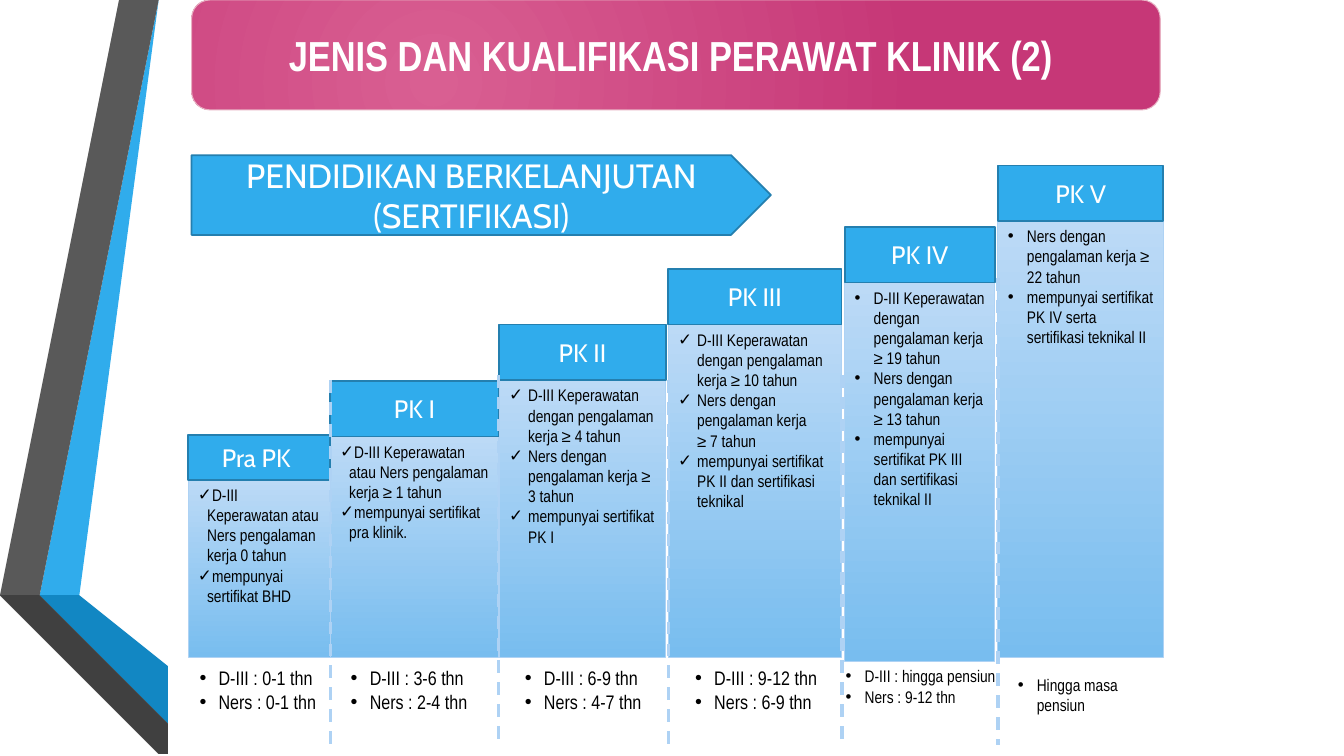
from pptx import Presentation
from pptx.dml.color import RGBColor
from pptx.enum.dml import MSO_LINE
from pptx.enum.shapes import MSO_CONNECTOR, MSO_SHAPE
from pptx.enum.text import MSO_ANCHOR, PP_ALIGN
from pptx.oxml.ns import qn
from pptx.util import Cm, Pt
from lxml import etree
from dataclasses import dataclass

RECT, ARROW, ROUND = MSO_SHAPE.RECTANGLE, MSO_SHAPE.PENTAGON, MSO_SHAPE.ROUNDED_RECTANGLE
STRAIGHT, DASH = MSO_CONNECTOR.STRAIGHT, MSO_LINE.DASH
TOP, MIDDLE = MSO_ANCHOR.TOP, MSO_ANCHOR.MIDDLE
LEFT, CENTER = PP_ALIGN.LEFT, PP_ALIGN.CENTER


@dataclass(frozen=True)
class Theme:
    blue: str = "30ACEC"
    edge: str = "247FAF"
    pale: str = "AED2F4"
    white: str = "FFFFFF"
    black: str = "000000"
    rose: str = "E8B1C3"
    gray: str = "595959"
    coal: str = "262626"
    navy: str = "0C5A82"
    deep: str = "1287C3"
    slate: str = "404040"
    sky: tuple = ("BCDAF6", "78BDEF")
    pink: tuple = ("D95F92", "C63777")
    plain: str = "Arial Narrow"
    round: str = "Cabin"
    title: int = 30
    banner: int = 24
    head: int = 18
    note: int = 14
    small: int = 12


class Board:
    def __init__(self, theme, slide):
        self.theme = theme
        self.shapes = slide.shapes

    def paint(self, shape, fill, line=None, width=0.75):
        shape.shadow.inherit = False
        if isinstance(fill, tuple):
            shape.fill.gradient()
            shape.fill.gradient_angle = 270
            for stop, color in zip(shape.fill.gradient_stops, fill):
                stop.color.rgb = RGBColor.from_string(color)
        else:
            shape.fill.solid()
            shape.fill.fore_color.rgb = RGBColor.from_string(fill)
        if line:
            shape.line.color.rgb = RGBColor.from_string(line)
            shape.line.width = Pt(width)
        else:
            shape.line.fill.background()

    def ribbon(self, fill, points):
        pen = self.shapes.build_freeform(*points[0], scale=Cm(1))
        pen.add_line_segments(points[1:], close=True)
        self.paint(pen.convert_to_shape(), fill)

    def block(self, kind, box, fill, line=None, width=0.75):
        shape = self.shapes.add_shape(kind, *map(Cm, box))
        self.paint(shape, fill, line, width)
        return shape

    def letter(self, shape, lines, color, style, anchor=MIDDLE, align=CENTER, mark=None, hang=0):
        frame = shape.text_frame
        frame.word_wrap = True
        frame.vertical_anchor = anchor
        for i, line in enumerate(lines):
            para = frame.add_paragraph() if i else frame.paragraphs[0]
            para.text = line
            para.alignment = align
            for run in para.runs:
                for key, value in style.items():
                    setattr(run.font, key, value)
                run.font.color.rgb = RGBColor.from_string(color)
            if mark:
                props = para._p.get_or_add_pPr()
                props.set("marL", str(Cm(hang)))
                props.set("indent", str(-Cm(hang)))
                etree.SubElement(props, qn("a:buFont")).set("typeface", "Arial")
                etree.SubElement(props, qn("a:buChar")).set("char", mark)

    def label(self, kind, box, text, size):
        shape = self.block(kind, box, self.theme.blue, self.theme.edge, 1.25)
        self.letter(shape, [text], self.theme.white, {"name": self.theme.round, "size": Pt(size)})

    def bullets(self, shape, lines, size, mark, hang):
        style = {"name": self.theme.plain, "size": Pt(size)}
        self.letter(shape, lines, self.theme.black, style, TOP, LEFT, mark, hang)

    def step(self, name, box, floor, mark, hang, lines):
        left, top, width, height = box
        base = top + height
        body = self.block(RECT, (left, base, width, floor - base), self.theme.sky, self.theme.pale)
        self.bullets(body, lines, self.theme.small, mark, hang)
        self.label(RECT, box, name, self.theme.head)

    def note(self, left, top, width, size, lines):
        shape = self.shapes.add_textbox(*map(Cm, (left, top, width, 1.45)))
        self.bullets(shape, lines, size, "•", 0.48)

    def divide(self, x, top, foot):
        line = self.shapes.add_connector(STRAIGHT, *map(Cm, (x, top, x, foot)))
        line.line.color.rgb = RGBColor.from_string(self.theme.pale)
        line.line.width = Pt(2.25)
        line.line.dash_style = DASH
        etree.SubElement(line._element.spPr, qn("a:effectLst"))

    def title(self, box, text):
        shape = self.block(ROUND, box, self.theme.pink, self.theme.rose)
        grad = shape._element.spPr.find(qn("a:gradFill"))
        grad.remove(grad.find(qn("a:lin")))
        glow = etree.SubElement(grad, qn("a:path"))
        glow.set("path", "circle")
        focus = etree.SubElement(glow, qn("a:fillToRect"))
        for side, share in {"l": 50, "t": 100, "r": 100, "b": 50}.items():
            focus.set(side, str(share * 1000))
        style = {"name": self.theme.plain, "size": Pt(self.theme.title), "bold": True}
        self.letter(shape, [text], self.theme.white, style)


RIBBONS = [
    (Theme.blue, [(1.27, 14.68), (1.96, 14.81), (4.39, 0), (3.68, 0)]),
    (Theme.gray, [(3.53, 0), (2.82, 0), (0.41, 14.55), (1.12, 14.66)]),
    (Theme.coal, [(0.41, 14.55), (3.68, 19.05), (3.84, 19.05)]),
    (Theme.navy, [(1.27, 14.71), (5.28, 19.05), (5.44, 19.05)]),
    (Theme.deep, [(1.27, 14.68), (5.44, 19.05), (7.19, 19.05), (1.96, 14.81)]),
    (Theme.slate, [(5.13, 19.05), (1.22, 14.81), (1.12, 14.66), (0.41, 14.55), (3.84, 19.05)]),
]
STEPS = [
    ("PK I", (8.32, 9.6, 4.25, 1.4), 16.56, "✓", 0.23,
     ["D-III Keperawatan atau Ners pengalaman kerja ≥ 1 tahun",
      "mempunyai sertifikat pra klinik."]),
    ("PK II", (12.58, 8.18, 4.2, 1.4), 16.56, "✓", 0.48,
     ["D-III Keperawatan dengan pengalaman kerja ≥ 4 tahun",
      "Ners dengan pengalaman kerja ≥ 3 tahun", "mempunyai sertifikat PK I"]),
    ("PK III", (16.84, 6.78, 4.37, 1.4), 16.56, "✓", 0.48,
     ["D-III Keperawatan dengan pengalaman kerja ≥ 10 tahun",
      "Ners dengan pengalaman kerja\v≥ 7 tahun",
      "mempunyai sertifikat PK II dan sertifikasi teknikal"]),
    ("PK IV", (21.29, 5.72, 3.78, 1.4), 16.66, "•", 0.48,
     ["D-III Keperawatan dengan pengalaman kerja ≥ 19 tahun",
      "Ners dengan pengalaman kerja ≥ 13 tahun",
      "mempunyai sertifikat PK III dan sertifikasi teknikal II"]),
    ("PK V", (25.15, 4.17, 4.17, 1.4), 16.58, "•", 0.48,
     ["Ners dengan pengalaman kerja ≥ 22 tahun",
      "mempunyai sertifikat PK IV serta sertifikasi teknikal II"]),
    ("Pra PK ", (4.74, 10.97, 3.58, 1.12), 16.56, "✓", 0.23,
     ["D-III Keperawatan atau Ners pengalaman kerja 0 tahun",
      "mempunyai sertifikat BHD"]),
]
NOTES = [
    (17.27, 16.66, 4.29, Theme.note, ["D-III : 9-12 thn", "Ners : 6-9 thn"]),
    (12.98, 16.66, 4.29, Theme.note, ["D-III : 6-9 thn", "Ners : 4-7 thn"]),
    (8.59, 16.66, 4.01, Theme.note, ["D-III : 3-6 thn", "Ners : 2-4 thn"]),
    (4.78, 16.66, 4.29, Theme.note, ["D-III : 0-1 thn", "Ners : 0-1 thn"]),
    (21.06, 16.66, 4.29, Theme.small, ["D-III : hingga pensiun", "Ners : 9-12 thn"]),
    (25.4, 16.87, 4.29, Theme.small, ["Hingga masa pensiun"]),
]
LINES = [(8.32, 9.58, 18.77), (12.57, 9.45, 18.64), (16.84, 9.58, 18.77),
         (25.15, 7.01, 18.77), (21.22, 9.45, 18.64)]


def main():
    deck = Presentation()
    deck.slide_width, deck.slide_height = Cm(33.87), Cm(19.05)
    theme = Theme()
    board = Board(theme, deck.slides.add_slide(deck.slide_layouts[6]))
    for ribbon in RIBBONS:
        board.ribbon(*ribbon)
    board.block(RECT, (4.24, 15.65, 25.4, 3.4), theme.white)
    board.label(ARROW, (4.83, 3.91, 14.6, 2.01), "PENDIDIKAN BERKELANJUTAN (SERTIFIKASI)", theme.banner)
    for step in STEPS:
        board.step(*step)
    for line in LINES:
        board.divide(*line)
    for note in NOTES:
        board.note(*note)
    board.title((4.83, 0, 24.41, 2.77), "JENIS DAN KUALIFIKASI PERAWAT KLINIK (2) ")
    deck.save("out.pptx")


if __name__ == "__main__":
    main()
